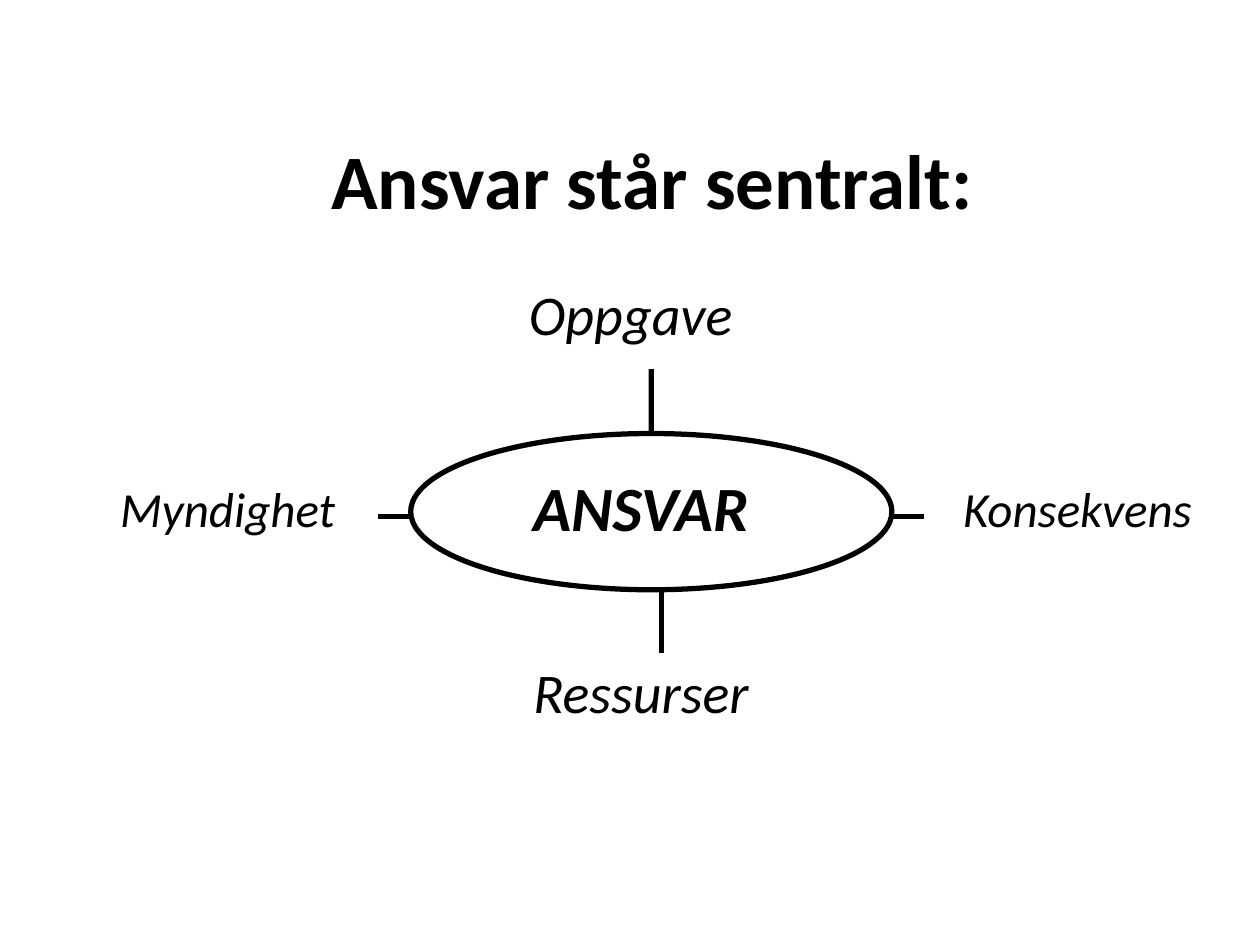
from typing import NamedTuple

from pptx import Presentation
from pptx import util as u
from pptx.dml.color import RGBColor
from pptx.enum import shapes, text
from pptx.oxml.ns import qn
from lxml import etree

COLORS = {"ink": "000000", "paper": "FFFFFF"}
FONT = "Calibri"
STROKE = u.Pt(3)


class Box(NamedTuple):
    left: float
    top: float
    width: float
    height: float


class Label(NamedTuple):
    wording: str
    box: Box
    size: int
    bold: bool = False
    wrap: bool = False


class Spoke(NamedTuple):
    x: float
    y: float
    dx: float
    dy: float


TITLE_BOX = Box(4.83, 2.54, 16.64, 2.11)
HUB_BOX = Box(8.28, 8.74, 9.7, 3.15)
LABELS = [
    Label("ANSVAR", Box(9.73, 9.32, 6.38, 1.78), 36, bold=True, wrap=True),
    Label("Oppgave", Box(10.24, 5.51, 4.95, 1.6), 32),
    Label("Ressurser", Box(10.03, 13.13, 5.79, 1.6), 32),
    Label("Myndighet", Box(1.9, 9.53, 5.38, 1.45), 28),
    Label("Konsekvens", Box(18.85, 9.53, 5.74, 1.45), 28),
]
TOP_SPOKE = Spoke(13.13, 8.74, 0, -1.3)
OTHER_SPOKES = [
    Spoke(13.34, 11.89, 0, 1.27),
    Spoke(8.26, 10.41, -0.64, 0),
    Spoke(17.98, 10.41, 0.64, 0),
]


def color(name: str) -> RGBColor:
    return RGBColor.from_string(COLORS[name])


def to_cm(box: Box) -> list:
    return [u.Cm(length) for length in box]


def write(holder, wording: str, *, size: int, bold=False, italic=False, wrap=False) -> None:
    frame = holder.text_frame
    frame.word_wrap = wrap
    frame.auto_size = text.MSO_AUTO_SIZE.SHAPE_TO_FIT_TEXT
    frame.vertical_anchor = text.MSO_ANCHOR.TOP
    paragraph = frame.paragraphs[0]
    paragraph.alignment = text.PP_ALIGN.CENTER
    run = paragraph.add_run()
    run.text = wording
    run.font.name = FONT
    run.font.size = u.Pt(size)
    run.font.bold = bold
    run.font.italic = italic
    run.font.color.rgb = color("ink")


def stroke(outlined) -> None:
    outlined.line.color.rgb = color("ink")
    outlined.line.width = STROKE


def draw_label(slide, label: Label) -> None:
    holder = slide.shapes.add_textbox(*to_cm(label.box))
    write(holder, label.wording, size=label.size, bold=label.bold, italic=True, wrap=label.wrap)


def draw_hub(slide, box: Box):
    hub = slide.shapes.add_shape(shapes.MSO_SHAPE.OVAL, *to_cm(box))
    hub.shadow.inherit = False
    hub.fill.background()
    stroke(hub)
    return hub


def draw_spoke(slide, spoke: Spoke):
    x, y, dx, dy = spoke
    line = slide.shapes.add_connector(
        shapes.MSO_CONNECTOR.STRAIGHT, u.Cm(x), u.Cm(y), u.Cm(x + dx), u.Cm(y + dy)
    )
    stroke(line)
    etree.SubElement(line._element.spPr, qn("a:effectLst"))
    return line


def main() -> None:
    deck = Presentation()
    deck.slide_width, deck.slide_height = u.Cm(25.4), u.Cm(19.05)
    slide = deck.slides.add_slide(deck.slide_layouts[5])
    slide.background.fill.solid()
    slide.background.fill.fore_color.rgb = color("paper")

    title = slide.shapes.title
    title.left, title.top, title.width, title.height = to_cm(TITLE_BOX)
    write(title, "Ansvar står sentralt:", size=44, bold=True)

    hub = draw_hub(slide, HUB_BOX)
    for label in LABELS:
        draw_label(slide, label)
    draw_spoke(slide, TOP_SPOKE).begin_connect(hub, 0)
    for spoke in OTHER_SPOKES:
        draw_spoke(slide, spoke)

    deck.save("out.pptx")


if __name__ == "__main__":
    main()
